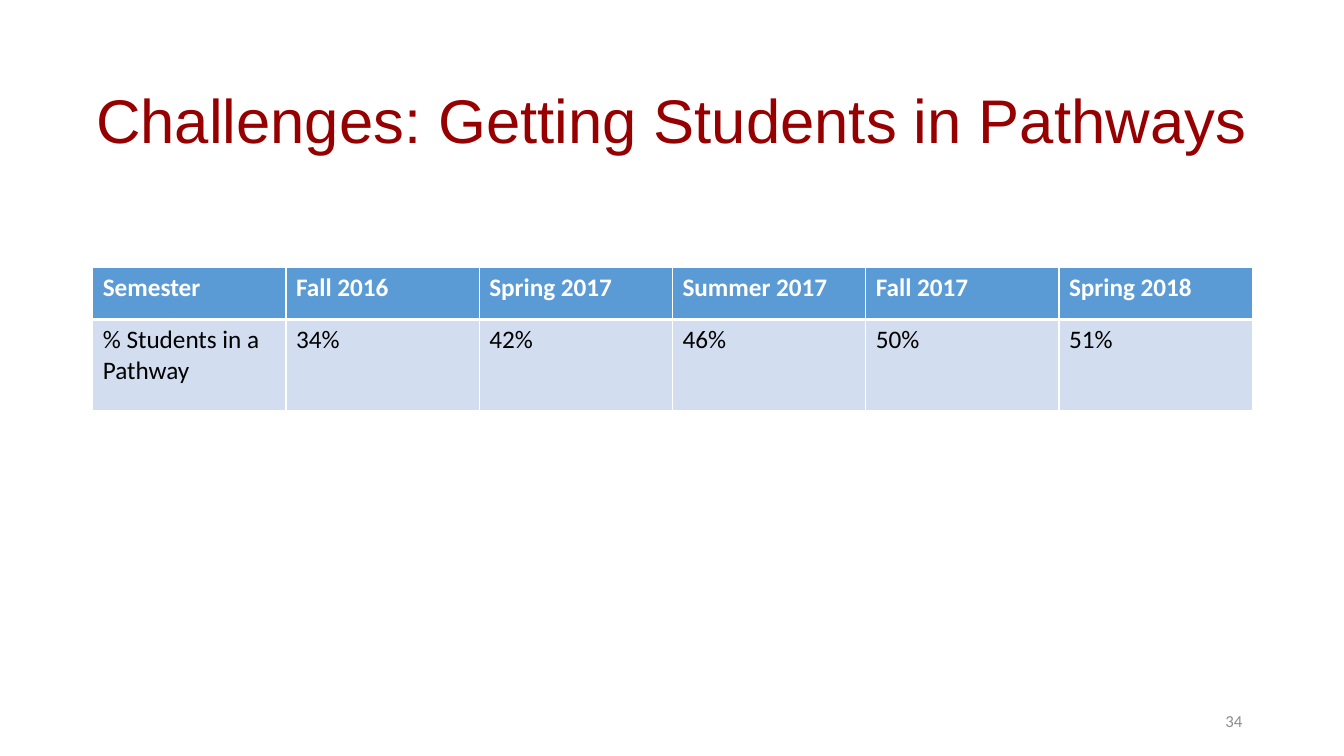
from lxml.etree import SubElement
from pptx import Presentation
from pptx.dml.color import RGBColor
from pptx.enum.text import MSO_ANCHOR, PP_ALIGN
from pptx.oxml.ns import qn
from pptx.util import Inches, Pt

HEADER = {"size": Pt(18), "bold": True, "color": "FFFFFF", "fill": "5B9BD5"}
BODY = {"size": Pt(18), "bold": False, "color": "000000", "fill": "D2DEEF"}
HEADER_BORDERS = {"lnL": 1, "lnR": 1, "lnT": 1, "lnB": 3}
BODY_BORDERS = {"lnL": 1, "lnR": 1, "lnT": 3, "lnB": 1}

PATHWAY_SHARES = {
    "Semester": "% Students in a Pathway",
    "Fall 2016": "34%",
    "Spring 2017": "42%",
    "Summer 2017": "46%",
    "Fall 2017": "50%",
    "Spring 2018": "51%",
}


def rgb(value):
    return RGBColor.from_string(value)


class PathwaysSlide:
    font = "Calibri"
    border_color = "FFFFFF"

    def __init__(self, presentation):
        self.slide = presentation.slides.add_slide(presentation.slide_layouts[6])

    def styled_run(self, paragraph, text, color, **formats):
        run = paragraph.add_run()
        run.text = text
        for attribute, value in ({"name": self.font} | formats).items():
            setattr(run.font, attribute, value)
        run.font.color.rgb = rgb(color)

    def text(self, text, left, top, width, height, alignment, spacing=1.0, **style):
        box = self.slide.shapes.add_textbox(
            Inches(left), Inches(top), Inches(width), Inches(height))
        frame = box.text_frame
        frame.word_wrap = True
        frame.vertical_anchor = MSO_ANCHOR.MIDDLE
        paragraph = frame.paragraphs[0]
        paragraph.alignment = alignment
        paragraph.line_spacing = spacing
        self.styled_run(paragraph, text, **style)

    def borders(self, cell, widths):
        properties = cell._tc.get_or_add_tcPr()
        for side, width in widths.items():
            line = SubElement(properties, qn(f"a:{side}"), w=str(Pt(width)))
            fill = SubElement(line, qn("a:solidFill"))
            SubElement(fill, qn("a:srgbClr"), val=self.border_color)

    def cell(self, cell, text, widths, fill, **style):
        self.borders(cell, widths)
        cell.fill.solid()
        cell.fill.fore_color.rgb = rgb(fill)
        self.styled_run(cell.text_frame.paragraphs[0], text, **style)

    def table(self, shares, left, top, width, row_heights):
        table = self.slide.shapes.add_table(
            len(row_heights), len(shares), Inches(left), Inches(top),
            Inches(width), Inches(sum(row_heights))).table
        for row, height in zip(table.rows, row_heights):
            row.height = Inches(height)
        for column, (semester, share) in enumerate(shares.items()):
            self.cell(table.cell(0, column), semester, HEADER_BORDERS, **HEADER)
            self.cell(table.cell(1, column), share, BODY_BORDERS, **BODY)


def main():
    presentation = Presentation()
    presentation.slide_width = Inches(13.33)
    presentation.slide_height = Inches(7.5)
    pathways = PathwaysSlide(presentation)
    pathways.text("Challenges: Getting Students in Pathways", 0.83, 0.5, 11.67, 1.45,
                  PP_ALIGN.CENTER, spacing=0.9, name="Arial", size=Pt(44), color="960000")
    pathways.table(PATHWAY_SHARES, 0.92, 2.65, 11.5, (0.52, 0.9))
    pathways.text("34", 9.42, 6.95, 3, 0.4, PP_ALIGN.RIGHT, size=Pt(12), color="8C8C8C")
    presentation.save("out.pptx")


if __name__ == "__main__":
    main()
